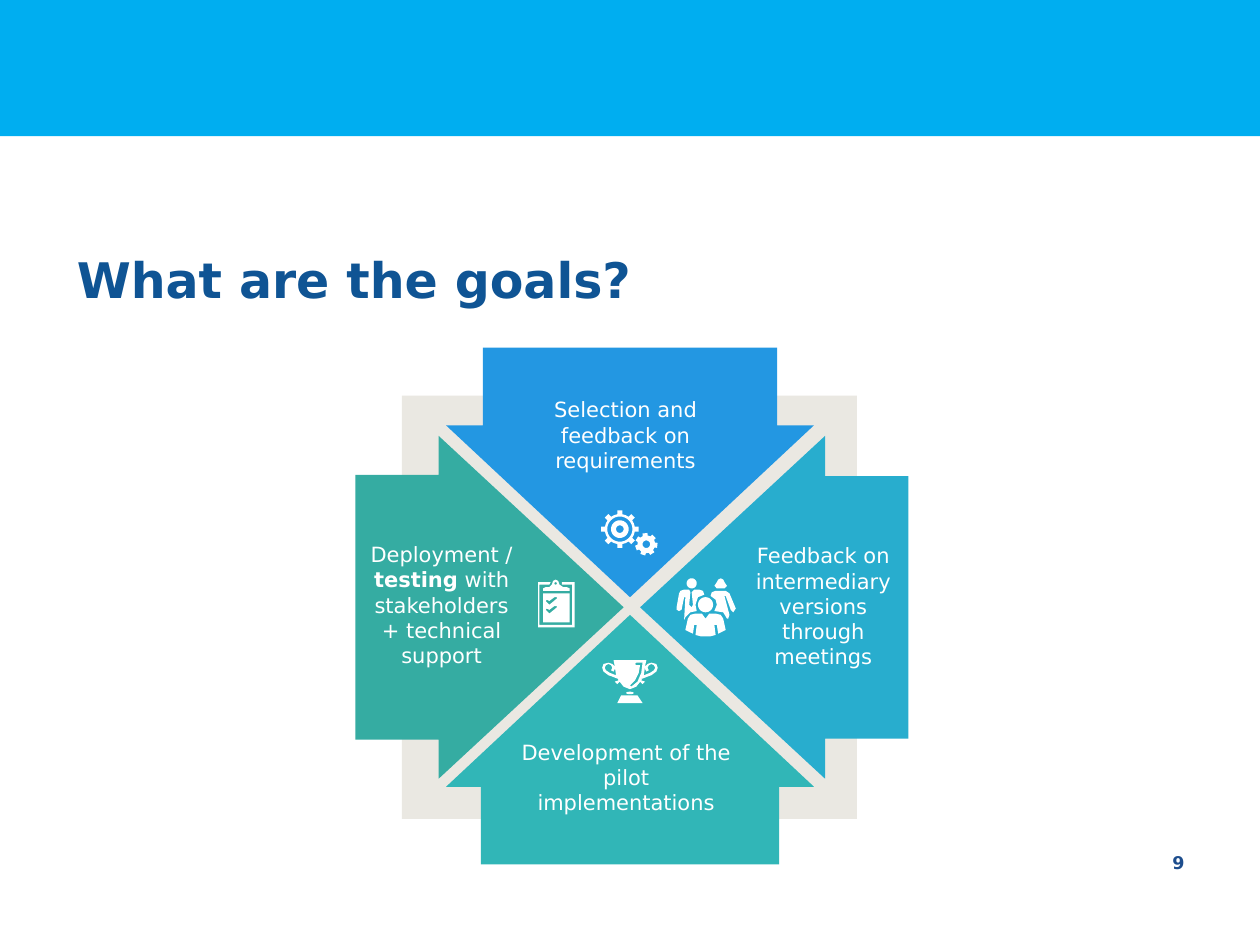
from dataclasses import dataclass
from math import cos, pi, sin

from pptx import Presentation
from pptx.dml.color import RGBColor
from pptx.enum.shapes import MSO_SHAPE as Shape
from pptx.enum.text import MSO_ANCHOR as Anchor, PP_ALIGN as Align
from pptx.util import Inches, Pt


@dataclass(frozen=True)
class Theme:
    font: str = "DejaVu Sans"
    band: str = "00AEF0"
    title: str = "0F5494"
    number: str = "1D4D8D"
    panel: str = "EAE8E2"
    white: str = "FFFFFF"
    title_size: int = 28
    label_size: int = 12
    number_size: int = 10


THEME = Theme()

ARROWS = [
    (0, (2.82, 3.46, 2.13, 2.72), 0.772, "35ACA2"),
    (90, (4.01, 2.29, 1.98, 2.92), 0.8, "2397E2"),
    (180, (5.08, 3.46, 2.13, 2.72), 0.766, "28ADCE"),
    (270, (4.01, 4.41, 1.98, 2.92), 0.811, "31B6B7"),
]

LABELS = [
    ((2.91, 4.3, 1.19, 1.22),
     [("Deployment / ", False), ("testing", True), (" with stakeholders + technical support", False)]),
    ((5.95, 4.31, 1.17, 0.67), [("Feedback on intermediary versions through meetings", False)]),
    ((4.25, 3.15, 1.43, 0.61), [("Selection and feedback on requirements", False)]),
    ((4.1, 5.87, 1.74, 0.74), [("Development of the pilot implementations", False)]),
]


def box(left, top, width, height):
    return Inches(left), Inches(top), Inches(width), Inches(height)


def paint(shape, color):
    shape.shadow.inherit = False
    shape.fill.solid()
    shape.fill.fore_color.rgb = RGBColor.from_string(color)
    shape.line.fill.background()


def add_block(slide, kind, place, color):
    shape = slide.shapes.add_shape(kind, *box(*place))
    paint(shape, color)
    return shape


def write_text(frame, runs, *, size, color, align, anchor=Anchor.TOP, inset=None, after=0):
    frame.word_wrap = True
    frame.vertical_anchor = anchor
    if inset is not None:
        frame.margin_left = frame.margin_right = Inches(inset)
        frame.margin_top = frame.margin_bottom = Inches(inset)
    paragraph = frame.paragraphs[0]
    paragraph.alignment = align
    paragraph.space_after = Pt(after)
    for text, bold in runs:
        run = paragraph.add_run()
        run.text = text
        run.font.name = THEME.font
        run.font.size = Pt(size)
        run.font.bold = bold
        run.font.color.rgb = RGBColor.from_string(color)


def add_title(slide, text):
    title = slide.shapes.title
    title.left, title.top, title.width, title.height = box(0.51, 1.7, 9, 1.02)
    write_text(title.text_frame, [(text, True)], size=THEME.title_size,
               color=THEME.title, align=Align.LEFT, anchor=Anchor.MIDDLE)


def add_text(slide, place, runs, **style):
    write_text(slide.shapes.add_textbox(*box(*place)).text_frame, runs, **style)


def add_arrow(slide, angle, place, shaft, color):
    arrow = add_block(slide, Shape.RIGHT_ARROW, place, color)
    arrow.rotation = angle
    arrow.adjustments[0] = shaft
    arrow.adjustments[1] = 0.689


def add_icon(slide, outlines):
    builder = None
    for outline in outlines:
        points = [(Inches(x), Inches(y)) for x, y in outline]
        if builder is None:
            builder = slide.shapes.build_freeform(*points[0], scale=1.0)
        else:
            builder.move_to(*points[0])
        builder.add_line_segments(points[1:], close=True)
    paint(builder.convert_to_shape(), THEME.white)


def polar(x, y, radius, angle):
    return x + radius * cos(angle), y + radius * sin(angle)


def ellipse(x, y, rx, ry=None, steps=32):
    ry = ry or rx
    return [(x + rx * cos(2 * pi * i / steps), y + ry * sin(2 * pi * i / steps)) for i in range(steps)]


def gear(x, y, outer, root, teeth, half_width, turn=0.0):
    points = []
    for tooth in range(teeth):
        middle = turn + 2 * pi * tooth / teeth
        for radius, side in ((root, -1), (outer, -1), (outer, 1), (root, 1)):
            points.append(polar(x, y, radius, middle + side * half_width / radius))
        points.append(polar(x, y, root, middle + pi / teeth))
    return points


def rectangle(left, top, right, bottom):
    return [(left, top), (right, top), (right, bottom), (left, bottom)]


def mirror(points, axis=5.0):
    return [(2 * axis - x, y) for x, y in points]


def gears_icon():
    big, small = (4.92, 4.2), (5.13, 4.32)
    return [gear(*big, 0.15, 0.12, 8, 0.02), *[ellipse(*big, r) for r in (0.1, 0.07, 0.03)],
            gear(*small, 0.09, 0.07, 7, 0.02, 0.1), ellipse(*small, 0.03)]


def clipboard_icon():
    clip = [(4.31, 4.69), (4.31, 4.67), (4.33, 4.66), (4.36, 4.66), (4.38, 4.64), (4.39, 4.61),
            (4.41, 4.6), (4.43, 4.61), (4.44, 4.64), (4.47, 4.66), (4.5, 4.66), (4.52, 4.67), (4.52, 4.69)]
    frame = [(4.37, 4.62), (4.27, 4.62), (4.27, 4.98), (4.56, 4.98), (4.56, 4.62), (4.46, 4.62),
             (4.46, 4.64), (4.54, 4.64), (4.54, 4.96), (4.28, 4.96), (4.28, 4.64), (4.36, 4.64)]
    check = [(4.33, 4.77), (4.34, 4.76), (4.36, 4.77), (4.4, 4.74), (4.42, 4.74), (4.42, 4.75), (4.36, 4.8)]
    checks = [[(x, y + shift) for x, y in check] for shift in (0, 0.07)]
    return [frame, rectangle(4.31, 4.71, 4.52, 4.94), *checks, clip, ellipse(4.41, 4.63, 0.01)]


def people_icon():
    man = [(5.43, 4.92), (5.44, 4.74), (5.43, 4.74), (5.41, 4.84), (5.39, 4.85), (5.37, 4.84),
           (5.37, 4.82), (5.39, 4.71), (5.4, 4.69), (5.43, 4.68), (5.47, 4.68), (5.48, 4.7),
           (5.47, 4.8), (5.49, 4.82), (5.5, 4.8), (5.49, 4.7), (5.51, 4.68), (5.55, 4.68),
           (5.58, 4.69), (5.59, 4.72), (5.54, 4.74), (5.52, 4.8), (5.53, 4.85), (5.48, 4.86), (5.44, 4.9)]
    woman = [(5.77, 4.91), (5.74, 4.86), (5.67, 4.85), (5.69, 4.8), (5.68, 4.76), (5.64, 4.73),
             (5.65, 4.7), (5.68, 4.69), (5.76, 4.69), (5.79, 4.71), (5.84, 4.83), (5.82, 4.86),
             (5.8, 4.84), (5.76, 4.73), (5.75, 4.73), (5.79, 4.88), (5.78, 4.91)]
    hat = [(5.67, 4.65), (5.69, 4.62), (5.7, 4.6), (5.72, 4.59), (5.74, 4.6),
           (5.75, 4.62), (5.77, 4.65), (5.75, 4.67), (5.69, 4.67)]
    left_half = [(5.57, 4.87), (5.52, 4.87), (5.48, 4.88), (5.46, 4.91), (5.44, 5), (5.5, 5.03),
                 (5.51, 4.96), (5.53, 4.96), (5.52, 5.04), (5.56, 5.05)]
    front = [(5.6, 4.91), *left_half, *reversed(mirror(left_half, 5.6))]
    return [man, woman, front, ellipse(5.49, 4.63, 0.04), hat, ellipse(5.6, 4.8, 0.06)]


def trophy_icon():
    cup = [(4.87, 5.24), (4.88, 5.29), (4.89, 5.36), (4.91, 5.4), (4.95, 5.45), (5, 5.47)]
    handle = [(4.88, 5.29), (4.86, 5.27), (4.83, 5.26), (4.79, 5.27), (4.78, 5.3), (4.79, 5.33),
              (4.83, 5.36), (4.86, 5.37), (4.91, 5.39), (4.89, 5.36), (4.84, 5.34), (4.81, 5.32),
              (4.8, 5.3), (4.81, 5.28), (4.83, 5.27), (4.85, 5.28), (4.86, 5.3), (4.85, 5.32),
              (4.87, 5.33), (4.88, 5.31)]
    curl = [(4.88, 5.41), (4.91, 5.4), (4.92, 5.41), (4.9, 5.43)]
    shine = [(5.01, 5.45), (5, 5.44), (5.04, 5.4), (5.07, 5.34), (5.08, 5.28), (5.05, 5.28),
             (5.04, 5.27), (5.05, 5.26), (5.1, 5.26), (5.09, 5.34), (5.06, 5.41)]
    base = [(4.93, 5.52), (4.9, 5.58), (5.1, 5.58), (5.06, 5.52)]
    return [cup + mirror(cup[-2::-1]), handle, mirror(handle), curl, mirror(curl),
            shine, ellipse(5, 5.5, 0.03, 0.01), base]


def main():
    presentation = Presentation()
    presentation.slide_width, presentation.slide_height = Inches(10), Inches(7.5)
    slide = presentation.slides.add_slide(presentation.slide_layouts[5])
    add_block(slide, Shape.RECTANGLE, (0, 0, 10, 1.08), THEME.band)
    add_title(slide, "What are the goals?")
    add_block(slide, Shape.RECTANGLE, (3.19, 3.14, 3.61, 3.36), THEME.panel)
    for arrow in ARROWS:
        add_arrow(slide, *arrow)
    for place, runs in LABELS:
        add_text(slide, place, runs, size=THEME.label_size, color=THEME.white,
                 align=Align.CENTER, inset=0, after=6)
    for outlines in (gears_icon(), clipboard_icon(), people_icon(), trophy_icon()):
        add_icon(slide, outlines)
    add_text(slide, (7.17, 6.71, 2.33, 0.52), [("9", True)], size=THEME.number_size,
             color=THEME.number, align=Align.RIGHT)
    presentation.save("out.pptx")


if __name__ == "__main__":
    main()
